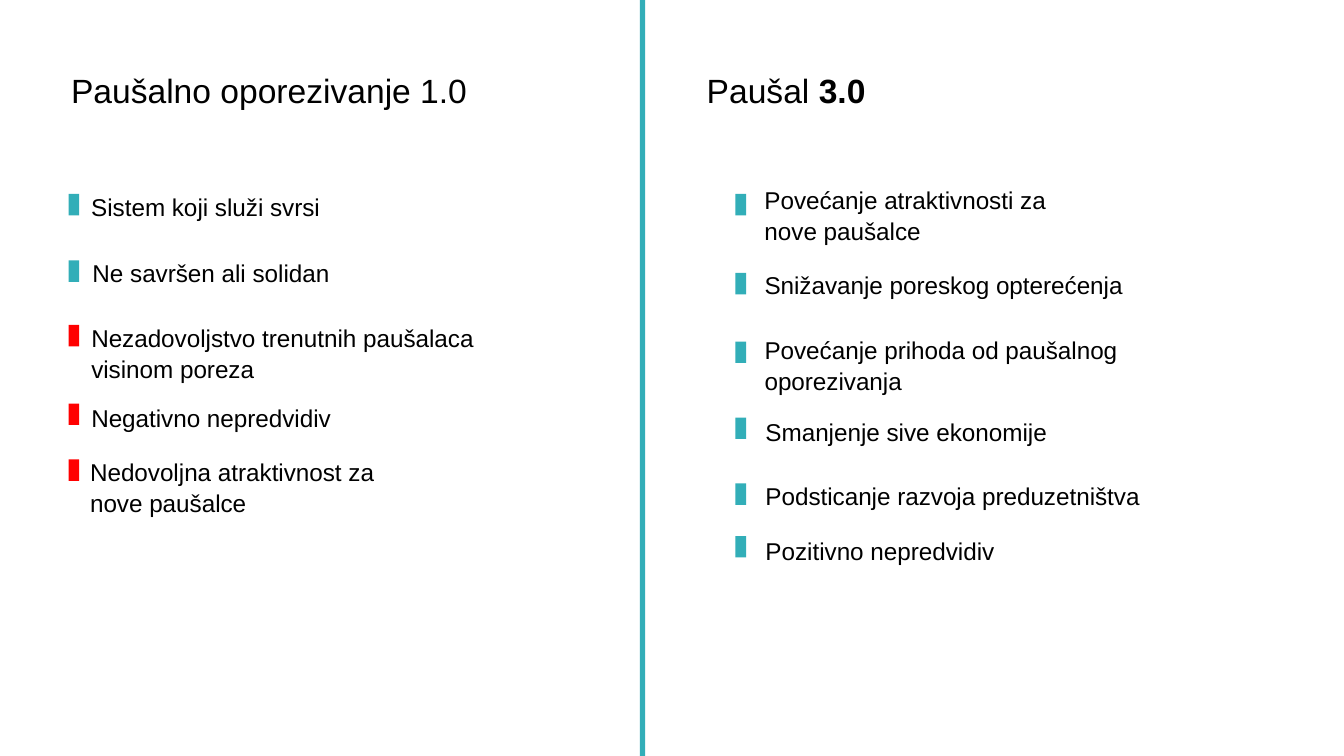
from dataclasses import dataclass

from pptx import Presentation
from pptx.dml.color import RGBColor
from pptx.enum.shapes import MSO_SHAPE
from pptx.slide import Slide
from pptx.util import Pt


@dataclass(frozen=True)
class Theme:
    teal: str = "32AEB8"
    red: str = "FF0000"
    ink: str = "000000"
    font: str = "Arial"
    heading_size: float = 18
    body_size: float = 13
    line_spacing: float = 1.06


@dataclass(frozen=True)
class Point:
    text: str
    left: float
    top: float
    width: float
    marker_top: float
    marker_color: str


@dataclass(frozen=True)
class Column:
    heading: tuple[tuple[str, bool], ...]
    heading_left: float
    heading_width: float
    marker_left: float
    points: tuple[Point, ...]


THEME = Theme()
HEADING_TOP = 32.4
HEADING_HEIGHT = 28.8
POINT_HEIGHT = 23
MARKER_WIDTH, MARKER_HEIGHT = 5.76, 11.52

COLUMNS = (
    Column(
        (("Paušalno oporezivanje 1.0", False),), 31, 232.6, 36.7,
        (
            Point("Sistem koji služi svrsi", 41.8, 98.6, 175.7, 103.9, THEME.teal),
            Point("Ne savršen ali solidan", 42.5, 133.9, 175.7, 139.5, THEME.teal),
            Point("Nezadovoljstvo trenutnih paušalaca visinom poreza",
                  41.8, 168.5, 239, 174.1, THEME.red),
            Point("Negativno nepredvidiv", 41.8, 211.7, 239, 216.2, THEME.red),
            Point("Nedovoljna atraktivnost za nove paušalce",
                  41.2, 240.5, 175.7, 246.2, THEME.red),
        ),
    ),
    Column(
        (("Paušal ", False), ("3.0", True)), 371.5, 238.3, 394,
        (
            Point("Povećanje atraktivnosti za nove paušalce",
                  402.5, 95, 175.7, 103.9, THEME.teal),
            Point("Snižavanje poreskog opterećenja", 402.5, 140.4, 226, 146.2, THEME.teal),
            Point("Povećanje prihoda od paušalnog oporezivanja",
                  402.5, 175, 215.3, 183, THEME.teal),
            Point("Smanjenje sive ekonomije", 403, 218.9, 239, 223.7, THEME.teal),
            Point("Podsticanje razvoja preduzetništva", 403, 253.4, 233.3, 259, THEME.teal),
            Point("Pozitivno nepredvidiv", 403, 283, 239, 287.2, THEME.teal),
        ),
    ),
)


def add_block(slide: Slide, left: float, top: float, width: float,
              height: float, color: str) -> None:
    block = slide.shapes.add_shape(
        MSO_SHAPE.RECTANGLE, Pt(left), Pt(top), Pt(width), Pt(height))
    block.shadow.inherit = False
    block.fill.solid()
    block.fill.fore_color.rgb = RGBColor.from_string(color)
    block.line.fill.background()


def add_text(slide: Slide, left: float, top: float, width: float, height: float,
             runs: tuple[tuple[str, bool], ...], size: float) -> None:
    frame = slide.shapes.add_textbox(
        Pt(left), Pt(top), Pt(width), Pt(height)).text_frame
    frame.word_wrap = True
    paragraph = frame.paragraphs[0]
    paragraph.line_spacing = THEME.line_spacing
    for wording, bold in runs:
        run = paragraph.add_run()
        run.text = wording
        formats = {"name": THEME.font, "size": Pt(size), "bold": bold}
        for attribute, value in formats.items():
            setattr(run.font, attribute, value)
        run.font.color.rgb = RGBColor.from_string(THEME.ink)


def add_column(slide: Slide, column: Column) -> None:
    add_text(slide, column.heading_left, HEADING_TOP, column.heading_width,
             HEADING_HEIGHT, column.heading, THEME.heading_size)
    for point in column.points:
        add_block(slide, column.marker_left, point.marker_top,
                  MARKER_WIDTH, MARKER_HEIGHT, point.marker_color)
        add_text(slide, point.left, point.top, point.width, POINT_HEIGHT,
                 ((point.text, False),), THEME.body_size)


def main() -> None:
    deck = Presentation()
    deck.slide_width, deck.slide_height = Pt(720), Pt(405)
    slide = deck.slides.add_slide(deck.slide_layouts[6])
    add_block(slide, 342.8, 0, 2.88, 405, THEME.teal)
    for column in COLUMNS:
        add_column(slide, column)
    deck.save("out.pptx")


if __name__ == "__main__":
    main()
